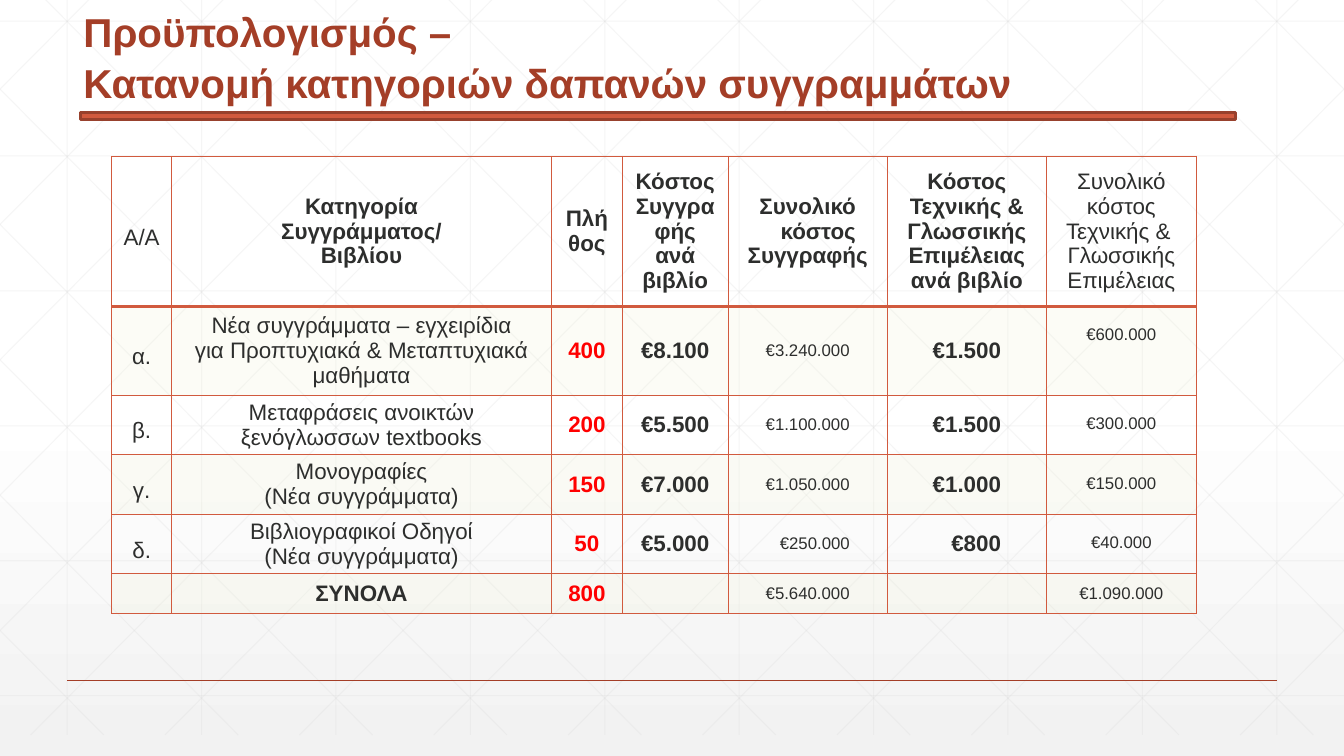
from dataclasses import dataclass
from copy import deepcopy

from lxml import etree
from pptx import Presentation
from pptx.dml.color import RGBColor
from pptx.enum.shapes import MSO_CONNECTOR, MSO_SHAPE
from pptx.enum.text import MSO_ANCHOR, MSO_AUTO_SIZE, PP_ALIGN
from pptx.oxml.ns import qn
from pptx.util import Cm, Pt

STRAIGHT = MSO_CONNECTOR.STRAIGHT
RECTANGLE = MSO_SHAPE.RECTANGLE
TOP, MIDDLE = MSO_ANCHOR.TOP, MSO_ANCHOR.MIDDLE
LEFT, CENTER = PP_ALIGN.LEFT, PP_ALIGN.CENTER
NO_AUTOFIT = MSO_AUTO_SIZE.NONE

WIDTH, HEIGHT = 33.87, 19.05
GRID_TOP, GRID_BOTTOM = -0.53, 18.52


@dataclass(frozen=True)
class Theme:
    font: str = "Arial"
    title: str = "A43E27"
    accent: str = "D15A3E"
    accent_edge: str = "98412D"
    text: str = "2D2E2D"
    highlight: str = "FF0000"
    band: str = "F0F2D3"
    grid: str = "D8D8D8"
    background: tuple = ((0, "FFFFFF"), (0.53, "FFFFFF"), (1, "F2F2F2"))
    title_size: float = 28.8
    body_size: float = 16
    small_size: float = 12


HEADERS = [
    ("Α/Α", dict(bold=False, spacing=1.5)),
    ("Κατηγορία\nΣυγγράμματος/\nΒιβλίου", {}),
    ("Πλή\vθος", {}),
    ("Κόστος Συγγραφής\nανά βιβλίο", {}),
    ("Συνολικό κόστος\nΣυγγραφής", dict(margin=0.53, indent=-0.53)),
    ("Κόστος Τεχνικής &\nΓλωσσικής\nΕπιμέλειας ανά βιβλίο", {}),
    ("Συνολικό κόστος\nΤεχνικής & \nΓλωσσικής\nΕπιμέλειας", dict(bold=False)),
]
ROWS = [
    ("α.", "Νέα συγγράμματα – εγχειρίδια\nγια Προπτυχιακά & Μεταπτυχιακά\nμαθήματα",
     "400", "€8.100", "€3.240.000", "€1.500", "€600.000"),
    ("β.", "Μεταφράσεις ανοικτών ξενόγλωσσων textbooks",
     "200", "€5.500", "€1.100.000", "€1.500", "€300.000"),
    ("γ.", "Μονογραφίες\n(Νέα συγγράμματα)",
     "150", "€7.000", "€1.050.000", "€1.000", "€150.000"),
    ("δ.", "Βιβλιογραφικοί Οδηγοί\n(Νέα συγγράμματα)",
     "50", "€5.000", "€250.000", "€800", "€40.000"),
    ("", "ΣΥΝΟΛΑ", "800", "", "€5.640.000", "", "€1.090.000"),
]
COLUMN_WIDTHS = [1.5, 9.58, 1.78, 2.67, 4.01, 4.01, 3.78]
ROW_HEIGHTS = [3.78, 2.24, 1.5, 1.5, 1.5, 0.99]


def set_alpha(element, percent):
    color = element.find(".//" + qn("a:srgbClr"))
    etree.SubElement(color, qn("a:alpha")).set("val", str(percent * 1000))


def write(frame, text, font, size, color, bold=False, align=CENTER,
          spacing=None, margin=0, indent=0):
    for number, line in enumerate(text.split("\n")):
        paragraph = frame.add_paragraph() if number else frame.paragraphs[0]
        paragraph.text = line
        paragraph.alignment = align
        if spacing:
            paragraph.line_spacing = spacing
        if margin:
            properties = paragraph._p.get_or_add_pPr()
            properties.set("marL", str(Cm(margin)))
            properties.set("indent", str(Cm(indent)))
        for run in paragraph.runs:
            run.font.name = font
            run.font.size = Pt(size)
            run.font.bold = bold
            run.font.color.rgb = RGBColor.from_string(color)


class SlideBuilder:
    def __init__(self, slide, theme):
        self.slide = slide
        self.theme = theme

    def background(self):
        fill = self.slide.background.fill
        fill.gradient()
        fill.gradient_angle = 270
        stop_list = self.slide.element.find(".//" + qn("a:gsLst"))
        stop_list.append(deepcopy(stop_list[0]))
        for stop, (position, color) in zip(fill.gradient_stops, self.theme.background):
            stop.position = position
            stop.color.rgb = RGBColor.from_string(color)

    def line(self, start, end, color, width, alpha=None):
        connector = self.slide.shapes.add_connector(
            STRAIGHT, *(Cm(value) for value in (*start, *end)))
        connector.line.color.rgb = RGBColor.from_string(color)
        connector.line.width = Pt(width)
        if alpha:
            set_alpha(connector.line._ln, alpha)
        etree.SubElement(connector.element.spPr, qn("a:effectLst"))

    def grid_line(self, start, end):
        self.line(start, end, self.theme.grid, 0.75, 24)

    def grid(self):
        step = WIDTH / 10
        for column in range(10):
            x = step * (column + 0.5)
            self.grid_line((x, GRID_TOP), (x, GRID_BOTTOM))
        for row in range(6):
            y = 0.53 + 3.4 * row
            self.grid_line((0, y), (WIDTH, y))
        slope = (GRID_BOTTOM - GRID_TOP) / 18.92
        for number in range(-5, 10):
            origin = 0.63 + step * number
            left, right = max(origin, 0), min(origin + 18.92, WIDTH)
            top, bottom = (GRID_TOP + (x - origin) * slope for x in (left, right))
            self.grid_line((left, top), (right, bottom))
            self.grid_line((WIDTH - left, top), (WIDTH - right, bottom))

    def bar(self, left, top, width, height):
        shape = self.slide.shapes.add_shape(
            RECTANGLE, Cm(left), Cm(top), Cm(width), Cm(height))
        shape.shadow.inherit = False
        shape.fill.solid()
        shape.fill.fore_color.rgb = RGBColor.from_string(self.theme.accent)
        shape.line.color.rgb = RGBColor.from_string(self.theme.accent_edge)
        shape.line.width = Pt(2)

    def title(self, text, left, top, width, height):
        title = self.slide.shapes.title
        self.slide.shapes.element.append(title.element)
        title.left, title.top = Cm(left), Cm(top)
        title.width, title.height = Cm(width), Cm(height)
        frame = title.text_frame
        frame.word_wrap = True
        frame.auto_size = NO_AUTOFIT
        frame.vertical_anchor = MIDDLE
        write(frame, text, self.theme.font, self.theme.title_size,
              self.theme.title, bold=True, align=LEFT, spacing=1.05)

    def cell_borders(self, cell, bottom_width):
        properties = cell._tc.get_or_add_tcPr()
        for position, side in enumerate(("lnL", "lnR", "lnT", "lnB")):
            width = bottom_width if side == "lnB" else 1
            border = etree.Element(qn("a:" + side), w=str(Pt(width)))
            fill = etree.SubElement(border, qn("a:solidFill"))
            etree.SubElement(fill, qn("a:srgbClr"), val=self.theme.accent)
            properties.insert(position, border)

    def cell(self, cell, text, banded=False, bottom_width=1, top_gap=0, **text_format):
        cell.margin_left = cell.margin_right = Cm(0.18)
        cell.margin_top, cell.margin_bottom = Cm(top_gap), 0
        cell.vertical_anchor = TOP if top_gap else MIDDLE
        if banded:
            cell.fill.solid()
            cell.fill.fore_color.rgb = RGBColor.from_string(self.theme.band)
            set_alpha(cell._tc.tcPr, 20)
        else:
            cell.fill.background()
        self.cell_borders(cell, bottom_width)
        settings = dict(font=self.theme.font, size=self.theme.body_size,
                        color=self.theme.text)
        write(cell.text_frame, text, **{**settings, **text_format})

    def budget_table(self, left, top):
        frame = self.slide.shapes.add_table(
            len(ROW_HEIGHTS), len(COLUMN_WIDTHS), Cm(left), Cm(top),
            Cm(sum(COLUMN_WIDTHS)), Cm(sum(ROW_HEIGHTS)))
        table = frame.table
        table.first_row = table.horz_banding = False
        for column, width in zip(table.columns, COLUMN_WIDTHS):
            column.width = Cm(width)
        for row, height in zip(table.rows, ROW_HEIGHTS):
            row.height = Cm(height)
        for column, (text, text_format) in enumerate(HEADERS):
            self.cell(table.cell(0, column), text, bottom_width=2,
                      **{"bold": True, **text_format})
        small = dict(size=self.theme.small_size)
        strong = dict(bold=True)
        column_formats = [dict(spacing=1.5), {}, dict(bold=True, color=self.theme.highlight),
                          strong, small, strong, small]
        special_formats = {(4, 4): dict(margin=0.36), (4, 5): dict(margin=0.47),
                           (5, 1): strong}
        for row, texts in enumerate(ROWS, start=1):
            for column, text in enumerate(texts):
                top_gap = 0.48 if column == 6 and row < len(ROWS) else 0
                self.cell(table.cell(row, column), text, banded=row % 2 == 1,
                          top_gap=top_gap,
                          **{**column_formats[column],
                             **special_formats.get((row, column), {})})


def main():
    presentation = Presentation()
    presentation.slide_width, presentation.slide_height = Cm(WIDTH), Cm(HEIGHT)
    slide = presentation.slides.add_slide(presentation.slide_layouts[5])
    theme = Theme()
    builder = SlideBuilder(slide, theme)
    builder.background()
    builder.grid()
    builder.line((1.69, 17.15), (32.18, 17.15), theme.title, 1)
    builder.bar(2.03, 2.84, 29.11, 0.18)
    builder.title("Προϋπολογισμός –\vΚατανομή κατηγοριών δαπανών συγγραμμάτων",
                  1.85, 0, 30.48, 2.82)
    builder.budget_table(2.82, 3.94)
    presentation.save("out.pptx")


if __name__ == "__main__":
    main()
